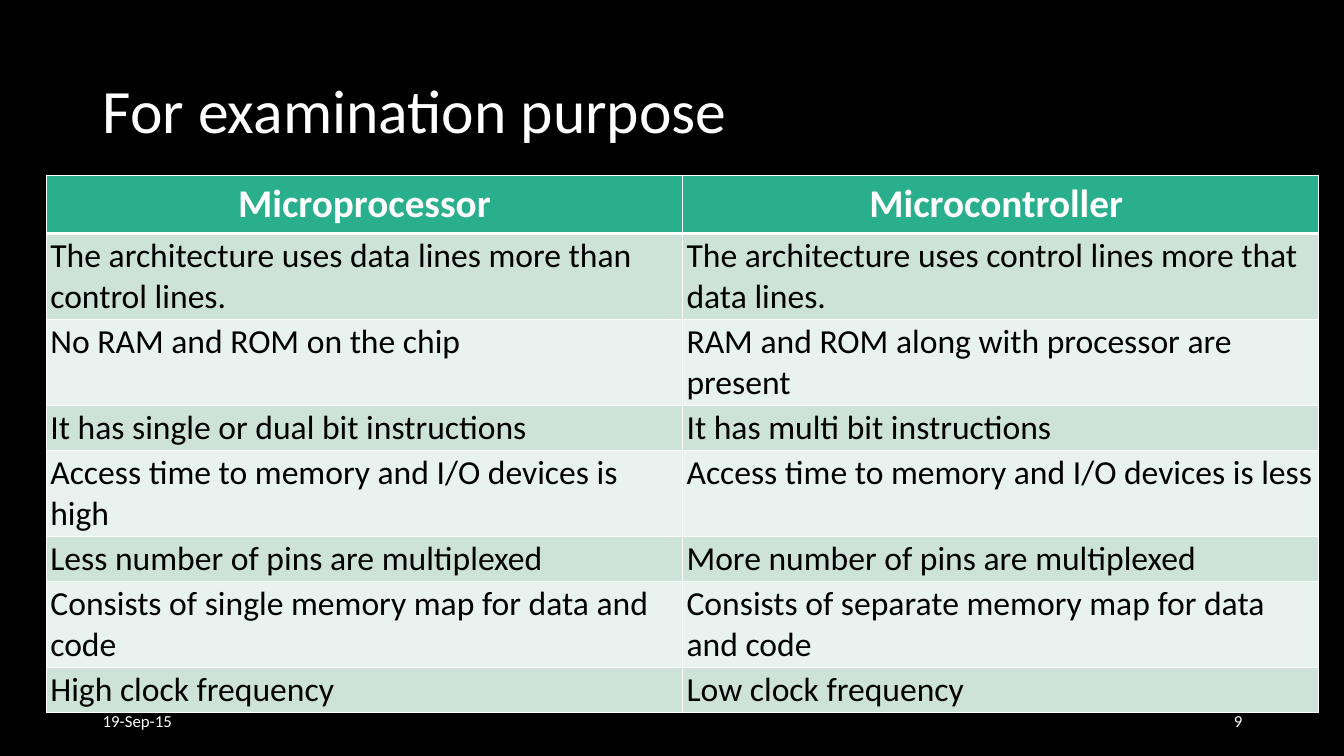
import pptx
import pptx.util
import pptx.dml.color
import pptx.enum.text
import pptx.oxml
import pptx.oxml.ns

Inches = pptx.util.Inches
Pt = pptx.util.Pt
ALIGN = pptx.enum.text.PP_ALIGN
MIDDLE = pptx.enum.text.MSO_ANCHOR.MIDDLE

WHITE = "FFFFFF"
BLACK = "000000"
HEADER_GREEN = "29AF8C"
BAND_FILLS = ["CDE3DA", "E8F2EE"]

COMPARISON = [
    ("Microprocessor", "Microcontroller "),
    ("The architecture uses data lines more than control lines.",
     "The architecture uses control lines more that data lines."),
    ("No RAM and ROM on the chip", "RAM and ROM along with processor are present"),
    ("It has single or dual bit instructions", "It has multi bit instructions"),
    ("Access time to memory and I/O devices is high",
     "Access time to memory and I/O devices is less"),
    ("Less number of pins are multiplexed", "More number of pins are multiplexed"),
    ("Consists of single memory map for data and code",
     "Consists of separate memory map for data and code"),
    ("High clock frequency", "Low clock frequency"),
]


def color(value):
    return pptx.dml.color.RGBColor.from_string(value)


def write(frame, text, size, ink, align=ALIGN.LEFT, bold=False):
    frame.text = text
    frame.word_wrap = True
    para = frame.paragraphs[0]
    para.alignment = align
    for span in para.runs:
        span.font.name = "Calibri"
        span.font.size = Pt(size)
        span.font.bold = bold
        span.font.color.rgb = color(ink)


def add_title(page, left, top, width, height):
    title = page.shapes.title
    title.left, title.top = Inches(left), Inches(top)
    title.width, title.height = Inches(width), Inches(height)
    frame = title.text_frame
    write(frame, "For examination purpose", 44, WHITE)
    frame.auto_size = pptx.enum.text.MSO_AUTO_SIZE.NONE
    frame.vertical_anchor = MIDDLE
    frame.paragraphs[0].line_spacing = 0.9


def set_borders(cell, widths):
    properties = cell._tc.get_or_add_tcPr()
    for index, (side, width) in enumerate(widths.items()):
        line = pptx.oxml.parse_xml(
            f'<a:ln{side} {pptx.oxml.ns.nsdecls("a")} w="{Pt(width)}">'
            f'<a:solidFill><a:srgbClr val="{WHITE}"/></a:solidFill></a:ln{side}>')
        properties.insert(index, line)


def add_comparison(page, left, top, width, row_height):
    count = len(COMPARISON)
    table = page.shapes.add_table(
        count, 2, Inches(left), Inches(top),
        Inches(width), Inches(row_height * count)).table
    for column in table.columns:
        column.width = Inches(width / 2)
    for row, texts in enumerate(COMPARISON):
        table.rows[row].height = Inches(row_height)
        for column, text in enumerate(texts):
            cell = table.cell(row, column)
            cell.fill.solid()
            if row == 0:
                cell.fill.fore_color.rgb = color(HEADER_GREEN)
                write(cell.text_frame, text, 28, WHITE, ALIGN.CENTER, True)
            else:
                cell.fill.fore_color.rgb = color(BAND_FILLS[(row - 1) % 2])
                cell.margin_left = cell.margin_right = Inches(0.04)
                cell.margin_top = cell.margin_bottom = Inches(0.02)
                write(cell.text_frame, text, 24, BLACK)
            set_borders(cell, {"L": 1, "R": 1, "T": 3 if row == 1 else 1,
                               "B": 3 if row == 0 else 1})


def add_footer(page, left, top, width, height):
    box_width = 3
    for text, offset, align in [("19-Sep-15", 0, ALIGN.LEFT),
                                ("9", width - box_width, ALIGN.RIGHT)]:
        box = page.shapes.add_textbox(Inches(left + offset), Inches(top),
                                      Inches(box_width), Inches(height))
        write(box.text_frame, text, 12, WHITE, align)
        box.text_frame.vertical_anchor = MIDDLE


def main():
    deck = pptx.Presentation()
    deck.slide_width, deck.slide_height = Inches(13.33), Inches(7.5)
    page = deck.slides.add_slide(deck.slide_layouts.get_by_name("Title Only"))
    page.background.fill.solid()
    page.background.fill.fore_color.rgb = color(BLACK)
    add_title(page, 0.92, 0.4, 11.5, 1.45)
    add_comparison(page, 0.46, 1.74, 12.62, 0.41)
    add_footer(page, 0.92, 6.95, 11.5, 0.4)
    deck.save("out.pptx")


if __name__ == "__main__":
    main()
